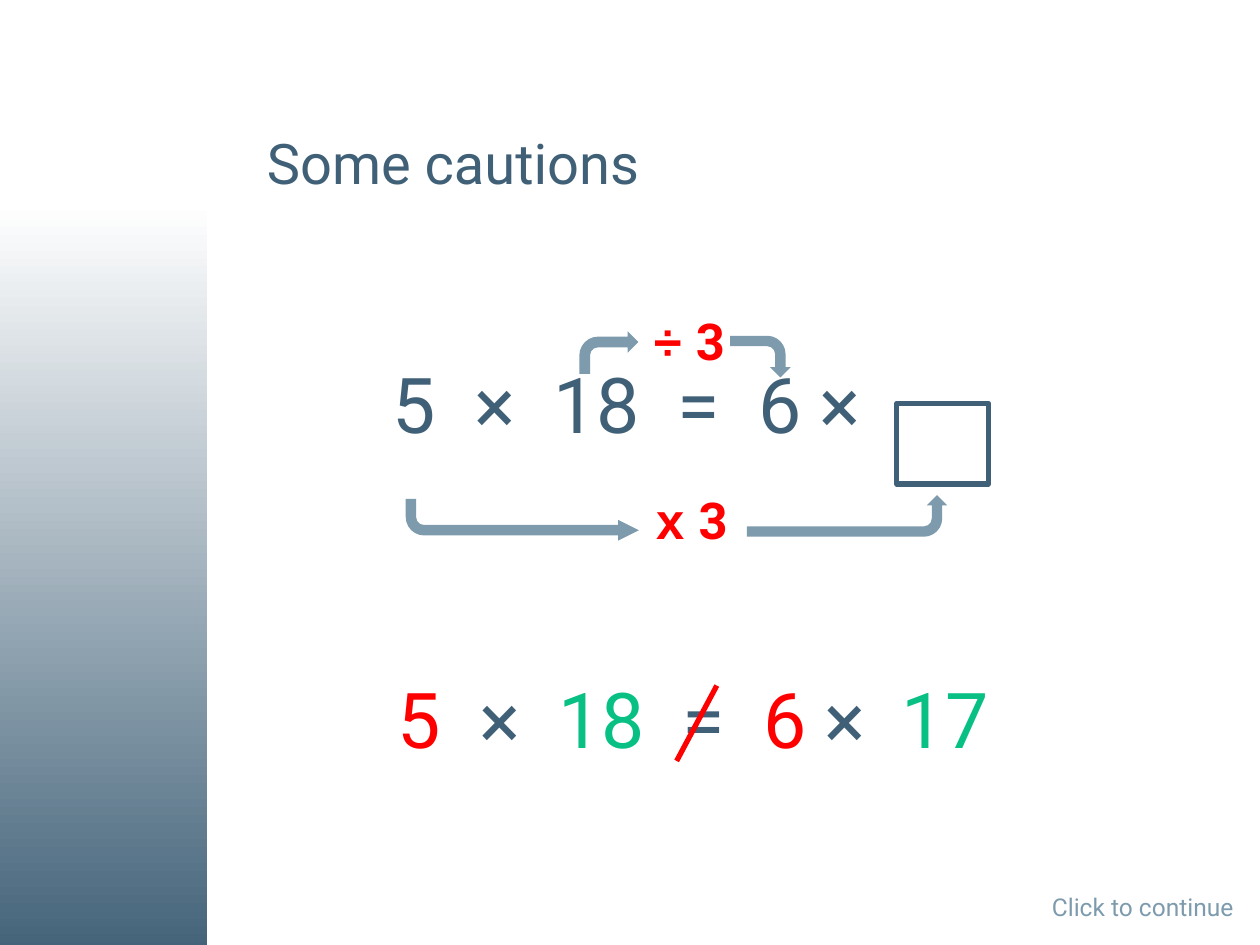
from dataclasses import dataclass
from lxml.etree import SubElement
from pptx import Presentation
from pptx.dml.color import RGBColor
from pptx.enum.shapes import MSO_CONNECTOR, MSO_SHAPE
from pptx.enum.text import MSO_ANCHOR, PP_ALIGN
from pptx.oxml.ns import qn
from pptx.util import Cm, Pt


@dataclass(frozen=True)
class Theme:
    navy: str = "406077"
    steel: str = "7D9BAD"
    red: str = "FF0000"
    green: str = "08C083"
    white: str = "FFFFFF"
    title: int = 32
    equation: int = 44
    step: int = 29
    hint: int = 14


theme = Theme()


def add_text(p, text, size, color, font="Roboto", bold=False):
    r = p.add_run()
    r.text = text
    r.font.name = font
    r.font.size = Pt(size)
    r.font.bold = bold
    r.font.color.rgb = RGBColor.from_string(color)


def add_box(s, left, top, width, height):
    tf = s.shapes.add_textbox(Cm(left), Cm(top), Cm(width), Cm(height)).text_frame
    tf.word_wrap = True
    return tf.paragraphs[0]


prs = Presentation()
prs.slide_width = Cm(25.4)
prs.slide_height = Cm(19.05)
s = prs.slides.add_slide(prs.slide_layouts[5])

band = s.shapes.add_shape(MSO_SHAPE.RECTANGLE, 0, 0, Cm(4.17), Cm(19.48))
band.shadow.inherit = False
band.line.fill.background()
band.fill.gradient()
band.fill.gradient_angle = 90
for stop, color, position in zip(band.fill.gradient_stops, (theme.navy, theme.white), (0, 0.79)):
    stop.color.rgb = RGBColor.from_string(color)
    stop.position = position

title = s.shapes.title
title.left, title.top, title.width, title.height = Cm(5.38), Cm(2.6), Cm(19.2), Cm(1.4)
tf = title.text_frame
tf.margin_left = tf.margin_right = tf.margin_top = tf.margin_bottom = 0
tf.vertical_anchor = MSO_ANCHOR.TOP
tf.paragraphs[0].alignment = PP_ALIGN.LEFT
add_text(tf.paragraphs[0], "Some cautions", theme.title, theme.navy)

tab_stops = (1.64, 3.23, 5.74, 7.37, 8.61, 10.16)
question = [(term, theme.navy) for term in ("5", "×", "18", "=", "6", "×")]
inequality = [
    ("5", theme.red), ("×", theme.navy), ("18", theme.green), ("=", theme.navy),
    ("6", theme.red), ("×", theme.navy), ("17", theme.green),
]
for left, top, terms in ((7.67, 7.06, question), (7.77, 13.41, inequality)):
    p = add_box(s, left, top, 13.97, 2.13)
    tabs = SubElement(p._p.get_or_add_pPr(), qn("a:tabLst"))
    for stop in tab_stops:
        SubElement(tabs, qn("a:tab"), pos=str(Cm(stop)), algn="l")
    for i, (term, color) in enumerate(terms):
        add_text(p, "\t" + term if i else term, theme.equation, color)

arrows = [
    (11.68, 6.68, 1.19, 0.86, 0, None, 0.25),
    (14.91, 6.58, 0.84, 1.22, 90, None, 0.25),
    (8.18, 10.06, 4.7, 0.84, 0, "flipV", 0.5),
    (16.66, 8.38, 0.84, 4.04, 90, "flipH", 0.25),
]
for left, top, width, height, rotation, flip, head in arrows:
    sp = s.shapes.add_shape(MSO_SHAPE.BENT_ARROW, Cm(left), Cm(top), Cm(width), Cm(height))
    sp.shadow.inherit = False
    sp.fill.solid()
    sp.fill.fore_color.rgb = RGBColor.from_string(theme.steel)
    sp.line.fill.background()
    sp.rotation = rotation
    sp.adjustments[2] = head
    sp.adjustments[3] = 0.44
    if flip:
        sp.element.spPr.find(qn("a:xfrm")).set(flip, "1")

for left, top, width, sign in ((12.93, 6.12, 3, "÷ "), (12.98, 9.73, 2.08, "x ")):
    p = add_box(s, left, top, width, 1.5)
    add_text(p, sign, theme.step, theme.red, font="Arial", bold=True)
    add_text(p, "3", theme.step, theme.red, bold=True)

blank = s.shapes.add_shape(MSO_SHAPE.RECTANGLE, Cm(18.08), Cm(8.13), Cm(1.85), Cm(1.63))
blank.shadow.inherit = False
blank.fill.background()
blank.line.color.rgb = RGBColor.from_string(theme.navy)
blank.line.width = Pt(3)

slash = s.shapes.add_connector(MSO_CONNECTOR.STRAIGHT, Cm(14.45), Cm(13.82), Cm(13.64), Cm(15.34))
slash.line.color.rgb = RGBColor.from_string(theme.red)
slash.line.width = Pt(3)
SubElement(slash.element.spPr, qn("a:effectLst"))

p = add_box(s, 20.73, 17.86, 4.39, 0.86)
p.alignment = PP_ALIGN.RIGHT
add_text(p, "Click to continue", theme.hint, theme.steel)

prs.save("out.pptx")
